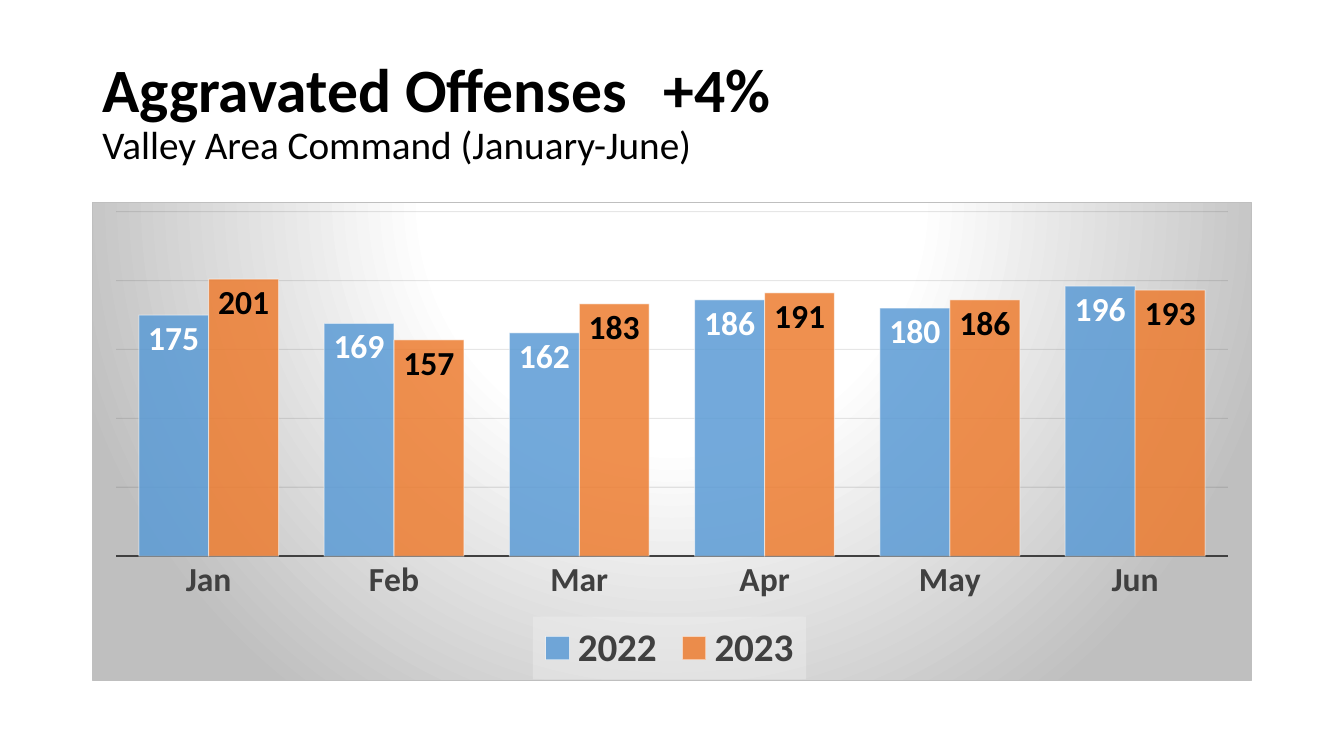
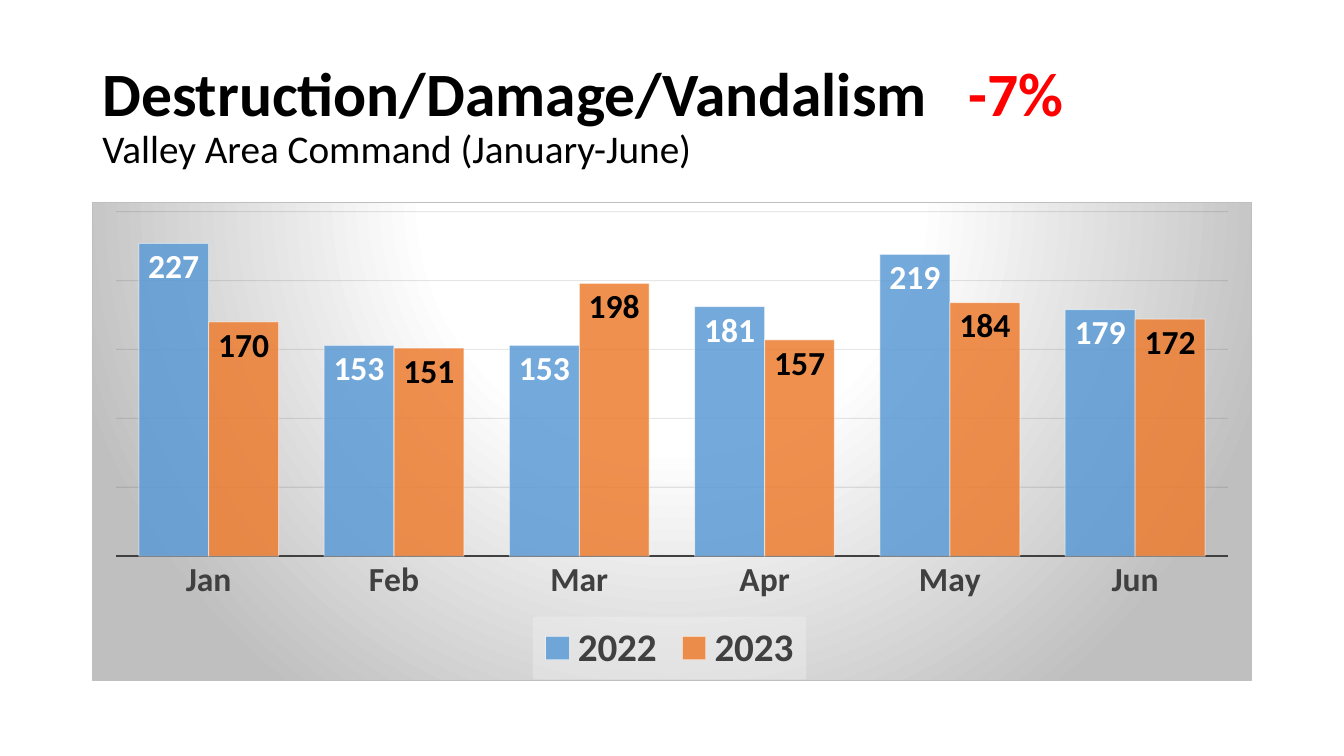
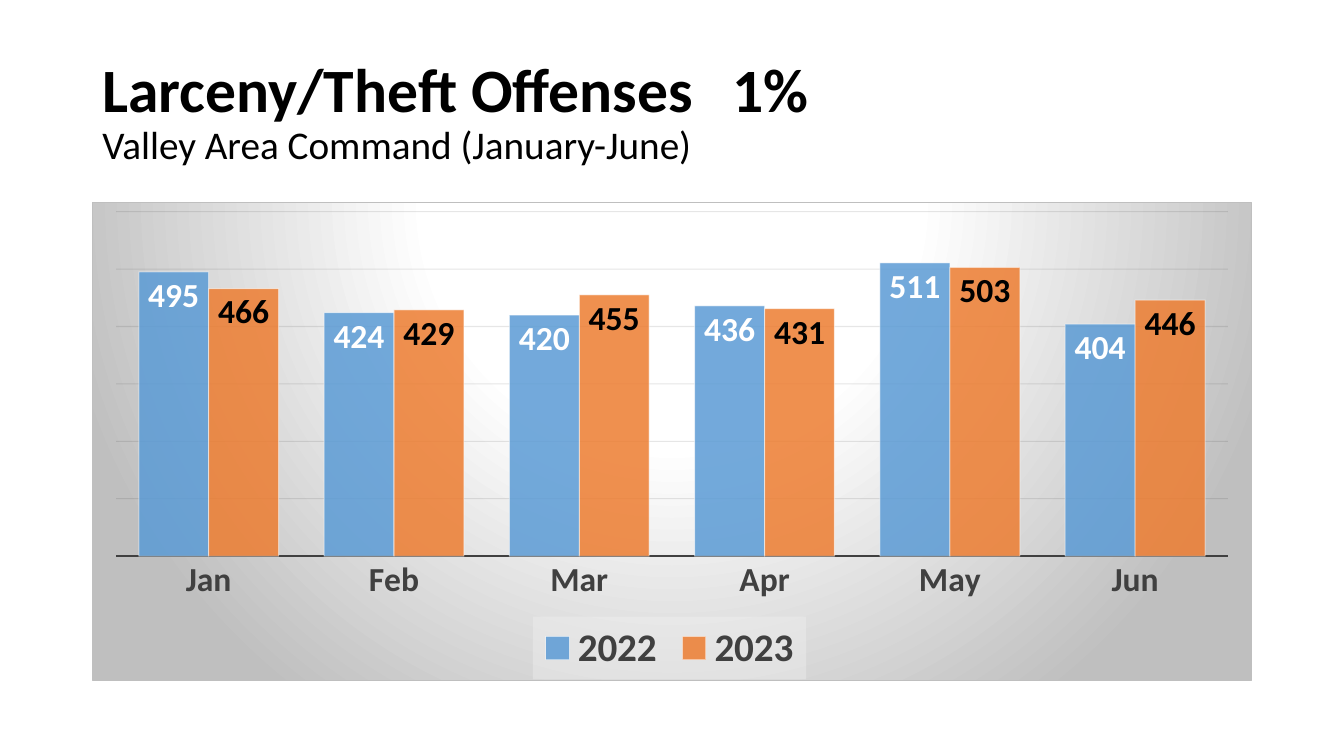
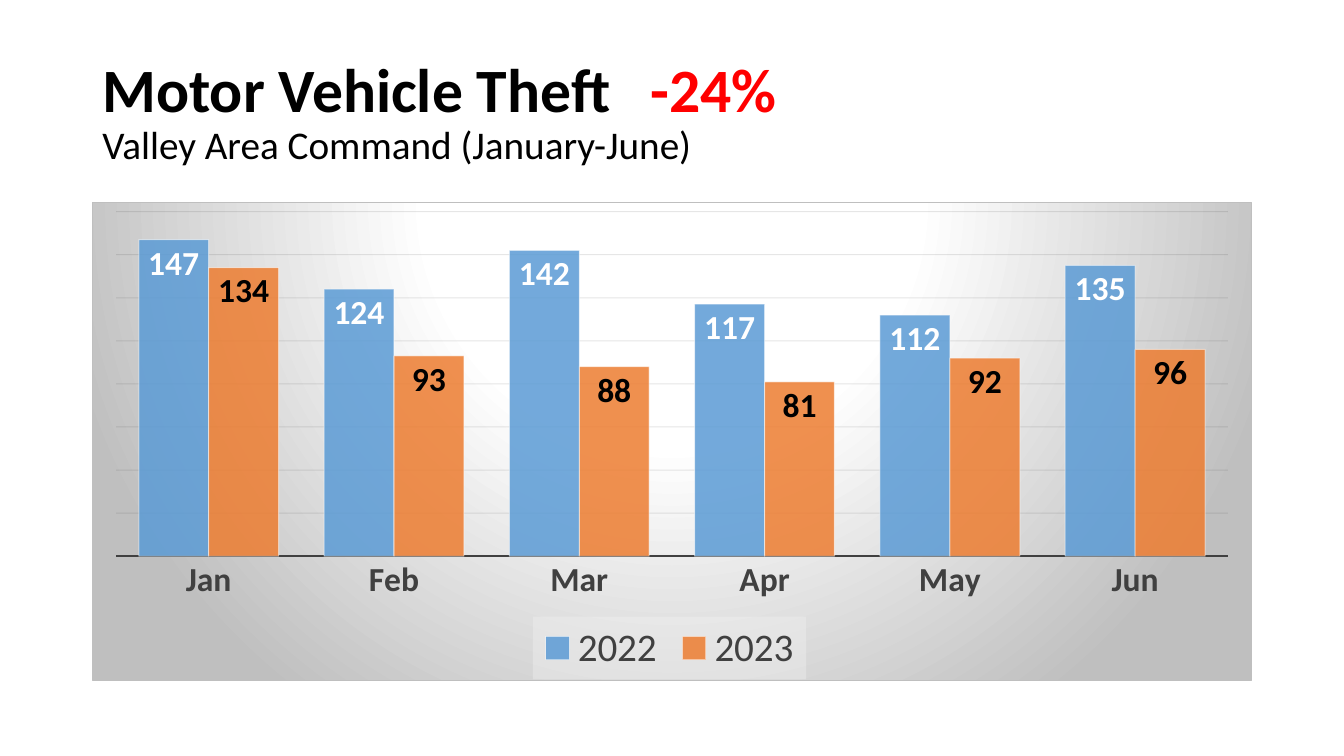
from pptx import Presentation
from pptx import util as u
from pptx.chart.data import CategoryChartData
from pptx.dml.color import RGBColor
from pptx.enum import chart as charts, text
from pptx.oxml import parse_xml
from pptx.oxml.ns import nsdecls, qn

FONT = "Calibri"
BLACK, WHITE, RED, DARK = "000000", "FFFFFF", "FF0000", "404040"
LEFT, WIDTH = 66, 828
MONTHS = ["Jan", "Feb", "Mar", "Apr", "May", "Jun"]
# year: (bar colour, label colour)
YEARS = {"2022": ("5B9BD5", WHITE), "2023": ("ED7D31", BLACK)}
OPACITY = {
    ".//c:ser/c:spPr/a:solidFill/a:srgbClr": 85,
    ".//c:ser/c:spPr/a:ln//a:srgbClr": 50,
    ".//c:majorGridlines//a:srgbClr": 10,
    "./c:chart/c:legend/c:spPr//a:srgbClr": 39,
}
BACKDROP = f"""<c:spPr {nsdecls('c', 'a')}>
  <a:gradFill><a:gsLst>
    <a:gs pos="0"><a:srgbClr val="FFFFFF"/></a:gs>
    <a:gs pos="39000"><a:srgbClr val="FFFFFF"/></a:gs>
    <a:gs pos="100000"><a:srgbClr val="BFBFBF"/></a:gs>
  </a:gsLst><a:path path="circle">
    <a:fillToRect l="50000" t="-80000" r="50000" b="180000"/>
  </a:path></a:gradFill>
  <a:ln w="9525"><a:solidFill><a:srgbClr val="BFBFBF"/></a:solidFill></a:ln>
</c:spPr>"""
LEGEND_FILL = f"""<c:spPr {nsdecls('c', 'a')}>
  <a:solidFill><a:srgbClr val="F2F2F2"/></a:solidFill><a:ln><a:noFill/></a:ln>
</c:spPr>"""


def rgb(value):
    return RGBColor.from_string(value)


def style_font(font, size, color=BLACK, bold=False):
    values = {"name": FONT, "size": u.Pt(size), "bold": bold}
    for key, value in values.items():
        setattr(font, key, value)
    font.color.rgb = rgb(color)


def style_line(line, color, width):
    line.color.rgb = rgb(color)
    line.width = u.Pt(width)


def manual_layout(target="", **fractions):
    """Chart layout with its edges as fractions of the chart area."""
    inner = f'<c:layoutTarget val="{target}"/>' if target else ""
    inner += '<c:xMode val="edge"/><c:yMode val="edge"/>'
    inner += "".join(f'<c:{k} val="{v}"/>' for k, v in fractions.items())
    return parse_xml(f"<c:layout {nsdecls('c')}><c:manualLayout>{inner}"
                     "</c:manualLayout></c:layout>")


class Report:
    def __init__(self):
        self.deck = Presentation()
        self.deck.slide_width, self.deck.slide_height = u.Pt(960), u.Pt(540)
        self.slide = None

    def new_slide(self):
        self.slide = self.deck.slides.add_slide(self.deck.slide_layouts[6])

    def title(self, offense, change, change_at, top=28.75):
        """Heading with the change at a tab stop, above the subtitle."""
        box = self.slide.shapes.add_textbox(
            u.Pt(LEFT), u.Pt(top), u.Pt(WIDTH), u.Pt(104.4))
        frame = box.text_frame
        frame.word_wrap = True
        frame.vertical_anchor = text.MSO_ANCHOR.MIDDLE
        heading, subtitle = frame.paragraphs[0], frame.add_paragraph()
        change_color = RED if change.startswith("-") else BLACK
        for line, words, size, color, bold in (
                (heading, offense + "\t", 44, BLACK, True),
                (heading, change, 44, change_color, True),
                (subtitle, "Valley Area Command (January-June)", 28, BLACK, False)):
            line.line_spacing = 0.9
            run = line.add_run()
            run.text = words
            style_font(run.font, size, color, bold)
        heading.font.size = u.Pt(44)
        heading_format = heading.runs[0].font
        heading_format.bold = True
        stops = parse_xml(f'<a:tabLst {nsdecls("a")}><a:tab '
                          f'pos="{u.Pt(change_at)}" algn="l"/></a:tabLst>')
        spacing = box.element.xpath(".//a:pPr/a:lnSpc")[0]
        spacing.addnext(stops)

    def monthly_chart(self, counts, top_value, step, bold_legend=True):
        data = CategoryChartData()
        data.categories = MONTHS
        for year, values in zip(YEARS, counts):
            data.add_series(year, values)
        chart = self.slide.shapes.add_chart(
            charts.XL_CHART_TYPE.COLUMN_CLUSTERED, u.Pt(LEFT), u.Pt(144),
            u.Pt(WIDTH), u.Pt(342.6), data).chart
        chart.has_title = False
        style_font(chart.font, 10)
        self.axes(chart, top_value, step)
        self.bars(chart.plots[0])
        self.legend(chart, bold_legend)
        self.backdrop(chart)

    def axes(self, chart, top_value, step):
        months, scale = chart.category_axis, chart.value_axis
        months.major_tick_mark = charts.XL_TICK_MARK.NONE
        style_font(months.tick_labels.font, 24, DARK, True)
        style_line(months.format.line, DARK, 1.5)
        values = {"visible": False, "minimum_scale": 0,
                  "maximum_scale": top_value, "major_unit": step,
                  "has_major_gridlines": True}
        for key, value in values.items():
            setattr(scale, key, value)
        style_line(scale.major_gridlines.format.line, "0D0D0D", 0.75)

    def bars(self, plot):
        plot.gap_width, plot.overlap, plot.vary_by_categories = 65, 0, False
        for series, (color, label_color) in zip(plot.series, YEARS.values()):
            series.format.fill.solid()
            series.format.fill.fore_color.rgb = rgb(color)
            style_line(series.format.line, WHITE, 0.75)
            labels = series.data_labels
            labels.show_value = True
            labels.position = charts.XL_LABEL_POSITION.INSIDE_END
            style_font(labels.font, 24, label_color, True)

    def legend(self, chart, bold):
        chart.has_legend = True
        legend = chart.legend
        legend.position = charts.XL_LEGEND_POSITION.BOTTOM
        legend.include_in_layout = False
        style_font(legend.font, 28, DARK, bold)

    def backdrop(self, chart):
        """Gradient, layouts and opacity, which need XML."""
        root = chart.element
        root.find(qn("c:chart")).addnext(parse_xml(BACKDROP))
        for old in root.xpath("./c:chart/*/c:layout"):
            old.getparent().remove(old)
        plot_area = root.xpath("./c:chart/c:plotArea")[0]
        plot_area.insert(0, manual_layout("inner", x=0.02, y=0.02, w=0.96, h=0.72))
        legend = root.xpath("./c:chart/c:legend")[0]
        legend.find(qn("c:legendPos")).addnext(manual_layout(x=0.38, y=0.87))
        legend.find(qn("c:overlay")).addnext(parse_xml(LEGEND_FILL))
        for where, percent in OPACITY.items():
            for color in root.xpath(where):
                color.append(parse_xml(
                    f'<a:alpha {nsdecls("a")} val="{percent * 1000}"/>'))


OFFENSES = [
    (dict(offense="Aggravated Offenses", change="+4%", change_at=401),
     dict(counts=[(175, 169, 162, 186, 180, 196), (201, 157, 183, 191, 186, 193)],
          top_value=250, step=50)),
    (dict(offense="Destruction/Damage/Vandalism", change="-7%", change_at=619,
          top=31.7),
     dict(counts=[(227, 153, 153, 181, 219, 179), (170, 151, 198, 157, 184, 172)],
          top_value=250, step=50)),
    (dict(offense="Larceny/Theft Offenses", change="1%", change_at=450),
     dict(counts=[(495, 424, 420, 436, 511, 404), (466, 429, 455, 431, 503, 446)],
          top_value=600, step=100)),
    (dict(offense="Motor Vehicle Theft", change="-24%", change_at=391.5),
     dict(counts=[(147, 124, 142, 117, 112, 135), (134, 93, 88, 81, 92, 96)],
          top_value=160, step=20, bold_legend=False)),
]


def main():
    report = Report()
    for heading, figures in OFFENSES:
        report.new_slide()
        report.title(**heading)
        report.monthly_chart(**figures)
    report.deck.save("out.pptx")


if __name__ == "__main__":
    main()
